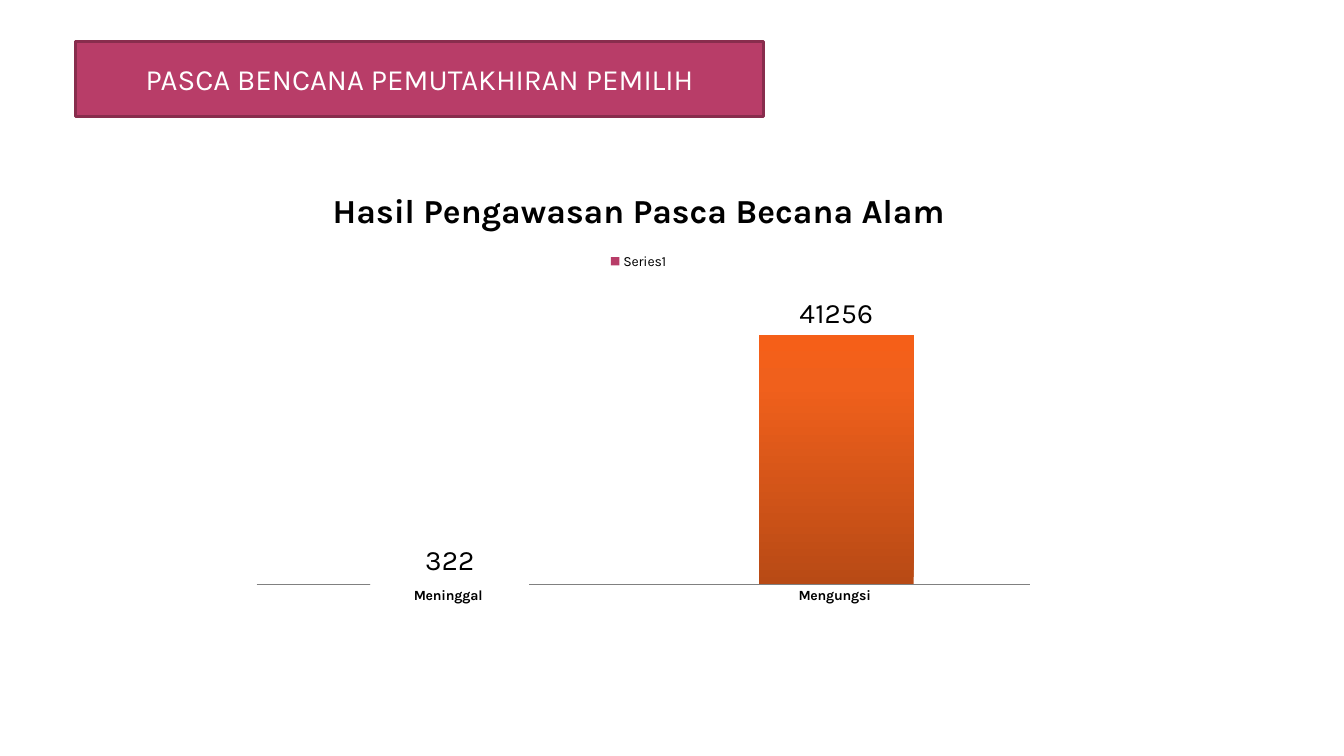
from lxml import etree
from pptx import Presentation
from pptx.chart.data import CategoryChartData
from pptx.dml.color import RGBColor
from pptx.enum.chart import XL_CHART_TYPE, XL_LABEL_POSITION, XL_LEGEND_POSITION, XL_TICK_MARK
from pptx.enum.shapes import MSO_SHAPE
from pptx.enum.text import MSO_ANCHOR, PP_ALIGN
from pptx.oxml import parse_xml
from pptx.oxml.ns import nsdecls, qn
from pptx.util import Cm, Pt

COLUMN = XL_CHART_TYPE.COLUMN_CLUSTERED
OUTSIDE_END = XL_LABEL_POSITION.OUTSIDE_END
LEGEND_TOP = XL_LEGEND_POSITION.TOP
NO_TICK = XL_TICK_MARK.NONE
FONT = "Karla"


def rgb(hex_color):
    return RGBColor.from_string(hex_color)


def set_font(font, size, color="000000", bold=False):
    font.name = FONT
    font.size = Pt(size)
    font.bold = bold
    font.color.rgb = rgb(color)


prs = Presentation()
prs.slide_width, prs.slide_height = Cm(33.87), Cm(19.05)
slide = prs.slides.add_slide(prs.slide_layouts[6])

# Heading banner
banner = slide.shapes.add_shape(MSO_SHAPE.RECTANGLE, Cm(1.9), Cm(1.04), Cm(17.35), Cm(1.9))
banner.shadow.inherit = False
banner.fill.solid()
banner.fill.fore_color.rgb = rgb("B83D68")
banner.line.color.rgb = rgb("882D4D")
banner.line.width = Pt(2)
banner.text_frame.vertical_anchor = MSO_ANCHOR.MIDDLE
heading = banner.text_frame.paragraphs[0]
heading.text = "PASCA BENCANA PEMUTAKHIRAN PEMILIH"
heading.alignment = PP_ALIGN.CENTER
set_font(heading.font, 21, "FFFFFF")

# Chart of disaster victims
victims = CategoryChartData()
victims.categories = ["Meninggal ", "Mengungsi "]
victims.add_series("Series1", [322, 41256])
chart = slide.shapes.add_chart(
    COLUMN, Cm(5.72), Cm(4.24), Cm(20.75), Cm(11.86), victims).chart
set_font(chart.font, 10)

chart.has_title = True
title = chart.chart_title.text_frame.paragraphs[0]
title.text = "Hasil Pengawasan Pasca Becana Alam"
set_font(title.font, 24, bold=True)
chart.chart_title.include_in_layout = False

chart.has_legend = True
chart.legend.position = LEGEND_TOP
chart.legend.include_in_layout = False
set_font(chart.legend.font, 10)

category_axis = chart.category_axis
category_axis.major_tick_mark = NO_TICK
category_axis.format.line.color.rgb = rgb("808080")
set_font(category_axis.tick_labels.font, 10, bold=True)

value_axis = chart.value_axis
value_axis.visible = False
value_axis.has_major_gridlines = False
value_axis.minimum_scale, value_axis.maximum_scale = 0, 45000

plot = chart.plots[0]
plot.gap_width = 150
plot.vary_by_categories = False
plot.has_data_labels = True
plot.data_labels.show_value = True
plot.data_labels.position = OUTSIDE_END
set_font(plot.data_labels.font, 20)

series = plot.series[0]
series.format.fill.solid()
series.format.fill.fore_color.rgb = rgb("B83D68")
dead = series.points[0].format
dead.fill.solid()
dead.fill.fore_color.rgb = rgb("92D050")
dead.line.color.rgb = rgb("FFFFFF")
dead.line.width = Pt(3)

# Three-stop gradient, dark at the foot of the column
displaced = series.points[1].format
displaced.fill.gradient()
gradient = displaced.fill._xPr.find(qn("a:gradFill"))
stops = "".join(
    f'<a:gs pos="{percent * 1000}"><a:srgbClr val="{color}"/></a:gs>'
    for percent, color in [(0, "B84A15"), (80, "F0601C"), (100, "F55F18")])
gradient.getparent().replace(gradient, parse_xml(
    f'<a:gradFill {nsdecls("a")} rotWithShape="1"><a:gsLst>{stops}</a:gsLst>'
    '<a:lin ang="16200000" scaled="0"/></a:gradFill>'))

# Fixed inner plot area, as fractions of the chart
layout = parse_xml(f'<c:layout {nsdecls("c")}><c:manualLayout/></c:layout>')
settings = [("layoutTarget", "inner"), ("xMode", "edge"), ("yMode", "edge"),
            ("x", "0.036"), ("y", "0.306"), ("w", "0.939"), ("h", "0.578")]
for tag, value in settings:
    etree.SubElement(layout[0], qn(f"c:{tag}")).set("val", value)
plot_area = chart._chartSpace.chart.plotArea
for old_layout in plot_area.findall(qn("c:layout")):
    plot_area.remove(old_layout)
plot_area.insert(0, layout)

prs.save("out.pptx")
